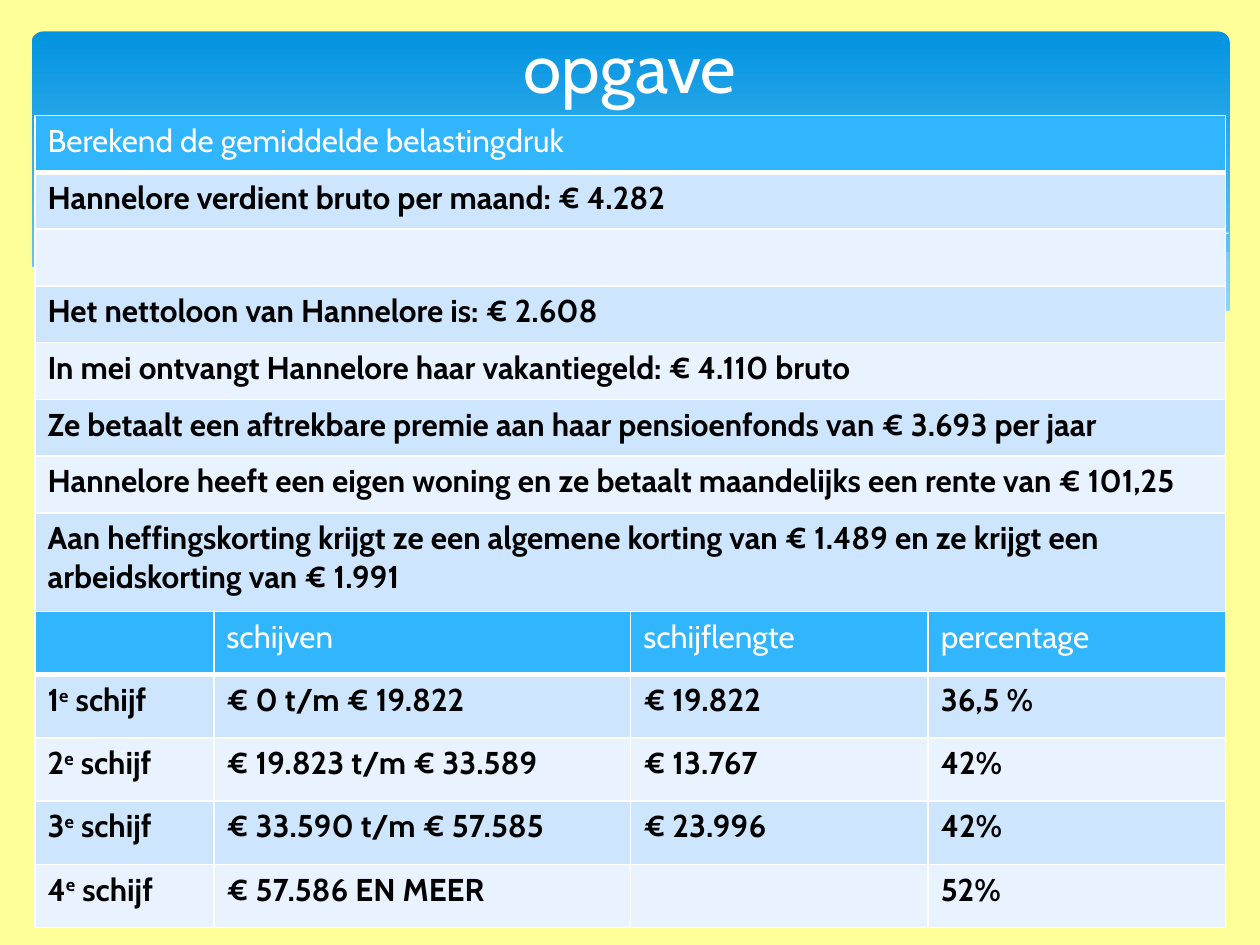
from dataclasses import dataclass
from typing import Optional

import lxml.etree
import pptx
import pptx.dml.color
import pptx.enum.dml
import pptx.enum.shapes
import pptx.enum.text
import pptx.oxml.ns
import pptx.util

Pt = pptx.util.Pt
RGBColor = pptx.dml.color.RGBColor
qn = pptx.oxml.ns.qn

FONT = "Cabin"
CREAM = RGBColor(0xFF, 0xFF, 0x99)
WHITE = RGBColor(0xFF, 0xFF, 0xFF)
BLACK = RGBColor(0, 0, 0)
DEEP_BLUE = RGBColor(0x02, 0x93, 0xE0)
SKY_BLUE = RGBColor(0x83, 0xD3, 0xFE)
MIST_BLUE = RGBColor(0xC6, 0xE7, 0xFC)
HEADER_BLUE = RGBColor(0x31, 0xB6, 0xFD)
BAND_BLUES = (RGBColor(0xE8, 0xF3, 0xFF), RGBColor(0xCE, 0xE5, 0xFE))


@dataclass(frozen=True)
class Wave:
    points: tuple[tuple[float, float], ...]
    fill: Optional[RGBColor] = None
    opacity: int = 100


@dataclass(frozen=True)
class Grid:
    top: float
    columns: tuple[float, ...]
    row_heights: tuple[float, ...]
    rows: tuple[tuple[str, ...], ...]


WAVES = (
    Wave(((702, 144), (682.6, 146.9), (652.3, 153.4), (619.9, 160.6),
          (560.9, 174.2), (508.3, 185.1), (475.9, 190.8), (507.6, 194.4),
          (536.4, 197.3), (562.3, 199.4), (586.1, 199.9), (614.9, 198.7),
          (640.1, 195.8), (663.1, 190.8), (683.3, 185), (702.7, 177.8),
          (702.7, 144)), MIST_BLUE, 29),
    Wave(((643, 196.6), (602.6, 190.8), (558, 182.9), (508.3, 172.8),
          (452.9, 159.8), (409.7, 149.8), (370.1, 142.6), (334.8, 137.5),
          (302.4, 134.6), (273.6, 133.2), (247.7, 133.9), (205.9, 137.5),
          (246.2, 143.3), (290.9, 151.9), (323.3, 159.8), (381.6, 172.8),
          (432.7, 183.6), (478.8, 191.5), (519.8, 197.3), (556.6, 199.4),
          (588.9, 200.2), (624.2, 198.7)), MIST_BLUE, 40),
    Wave(((222.5, 140.4), (247.7, 136.8), (278.6, 134.6), (311.8, 134.6),
          (352.1, 136.8), (400.3, 141.8), (457.9, 149.8), (523.4, 162.7),
          (598.3, 180.7), (653, 195.8))),
    Wave(((441.4, 185), (483.8, 173.5), (538.6, 160.6), (601.9, 146.9),
          (655.2, 138.2), (702, 133.2))),
    Wave(((703.4, 177.1), (676.8, 186.5), (647.3, 193.7), (612, 198),
          (571, 198.7), (522.7, 195.8), (466.6, 188.6), (399.6, 176.4),
          (321.8, 158.4), (262.8, 145.4), (210.2, 136.8), (165.6, 133.2),
          (127.4, 132.5), (95, 133.9), (68.4, 137.5), (42.5, 143.3),
          (16.6, 153.4), (16.6, 236.9), (703.4, 236.9)), CREAM),
)

FACTS = Grid(
    top=66.1,
    columns=(680.4,),
    row_heights=(32.45,) * 7 + (56.2,),
    rows=tuple((fact,) for fact in (
        "Berekend de gemiddelde belastingdruk",
        "Hannelore verdient bruto per maand: € 4.282",
        "",
        "Het nettoloon van Hannelore is: € 2.608",
        "In mei ontvangt Hannelore haar vakantiegeld: € 4.110 bruto",
        "Ze betaalt een aftrekbare premie aan haar pensioenfonds van € 3.693 per jaar",
        "Hannelore heeft een eigen woning en ze betaalt maandelijks een rente van € 101,25",
        "Aan heffingskorting krijgt ze een algemene korting van € 1.489 "
        "en ze krijgt een arbeidskorting van € 1.991",
    )),
)

BRACKETS = Grid(
    top=349.4,
    columns=(102.2, 238.2, 170, 170),
    row_heights=(36.15,) * 5,
    rows=(
        ("", "schijven", "schijflengte", "percentage"),
        ("1^e^ schijf", "€ 0 t/m € 19.822", "€ 19.822", "36,5 %"),
        ("2^e^ schijf", "€ 19.823 t/m € 33.589", "€ 13.767", "42%"),
        ("3^e^ schijf", "€ 33.590 t/m € 57.585", "€ 23.996", "42%"),
        ("4^e^ schijf", "€ 57.586 EN MEER", "", "52%"),
    ),
)


def add_run(paragraph, text: str, size: float, color: RGBColor,
            bold: bool = False, raised: bool = False) -> None:
    run = paragraph.add_run()
    run.text = text
    run.font.name = FONT
    run.font.size = Pt(size)
    run.font.bold = bold
    run.font.color.rgb = color
    if raised:
        run._r.get_or_add_rPr().set("baseline", "30000")


def draw_banner(slide) -> None:
    banner = slide.shapes.add_shape(
        pptx.enum.shapes.MSO_SHAPE.ROUNDED_RECTANGLE,
        Pt(18), Pt(18), Pt(684.7), Pt(194.4))
    banner.adjustments[0] = 0.034
    banner.shadow.inherit = False
    banner.line.fill.background()
    banner.fill.gradient()
    banner.fill.gradient_angle = 270
    shades = ((0, DEEP_BLUE), (0.9, SKY_BLUE))
    for stop, (position, color) in zip(banner.fill.gradient_stops, shades):
        stop.position = position
        stop.color.rgb = color


def draw_wave(slide, wave: Wave) -> None:
    start, *rest = [(Pt(x), Pt(y)) for x, y in wave.points]
    builder = slide.shapes.build_freeform(*start)
    builder.add_line_segments(rest, close=wave.fill is not None)
    outline = builder.convert_to_shape()
    outline.shadow.inherit = False
    if wave.fill is None:
        outline.fill.background()
        outline.line.color.rgb = WHITE
        outline.line.width = Pt(0)
        return
    outline.line.fill.background()
    outline.fill.solid()
    outline.fill.fore_color.rgb = wave.fill
    if wave.opacity < 100:
        color = outline._element.spPr.find(qn("a:solidFill"))[0]
        lxml.etree.SubElement(color, qn("a:alpha"), val=str(wave.opacity * 1000))


def set_borders(cell, bottom_width: float) -> None:
    properties = cell._tc.get_or_add_tcPr()
    for side, width in (("L", 1), ("R", 1), ("T", 1), ("B", bottom_width)):
        border = lxml.etree.SubElement(
            properties, qn(f"a:ln{side}"), w=str(Pt(width)))
        paint = lxml.etree.SubElement(border, qn("a:solidFill"))
        lxml.etree.SubElement(paint, qn("a:srgbClr"), val=str(WHITE))


def draw_grid(slide, grid: Grid) -> None:
    table = slide.shapes.add_table(
        len(grid.rows), len(grid.columns), Pt(20), Pt(grid.top),
        Pt(sum(grid.columns)), Pt(sum(grid.row_heights))).table
    for column, width in zip(table.columns, grid.columns):
        column.width = Pt(width)
    for row_index, texts in enumerate(grid.rows):
        table.rows[row_index].height = Pt(grid.row_heights[row_index])
        header = row_index == 0
        for column_index, text in enumerate(texts):
            cell = table.cell(row_index, column_index)
            set_borders(cell, 3 if header else 1)
            cell.fill.solid()
            cell.fill.fore_color.rgb = (
                HEADER_BLUE if header else BAND_BLUES[row_index % 2])
            for part_index, part in enumerate(text.split("^") if text else ()):
                add_run(cell.text_frame.paragraphs[0], part, 18,
                        WHITE if header else BLACK,
                        bold=not header, raised=part_index == 1)


def draw_title(slide, text: str) -> None:
    title = slide.shapes.add_textbox(Pt(36), Pt(15.1), Pt(648), Pt(44.6)).text_frame
    title.word_wrap = True
    title.vertical_anchor = pptx.enum.text.MSO_ANCHOR.MIDDLE
    title.paragraphs[0].alignment = pptx.enum.text.PP_ALIGN.CENTER
    add_run(title.paragraphs[0], text, 39.6, WHITE)


def main() -> None:
    deck = pptx.Presentation()
    deck.slide_width, deck.slide_height = Pt(720), Pt(540)
    slide = deck.slides.add_slide(deck.slide_layouts[6])
    slide.background.fill.solid()
    slide.background.fill.fore_color.rgb = CREAM
    draw_banner(slide)
    for wave in WAVES:
        draw_wave(slide, wave)
    draw_title(slide, "opgave")
    for grid in (FACTS, BRACKETS):
        draw_grid(slide, grid)
    deck.save("out.pptx")


if __name__ == "__main__":
    main()
